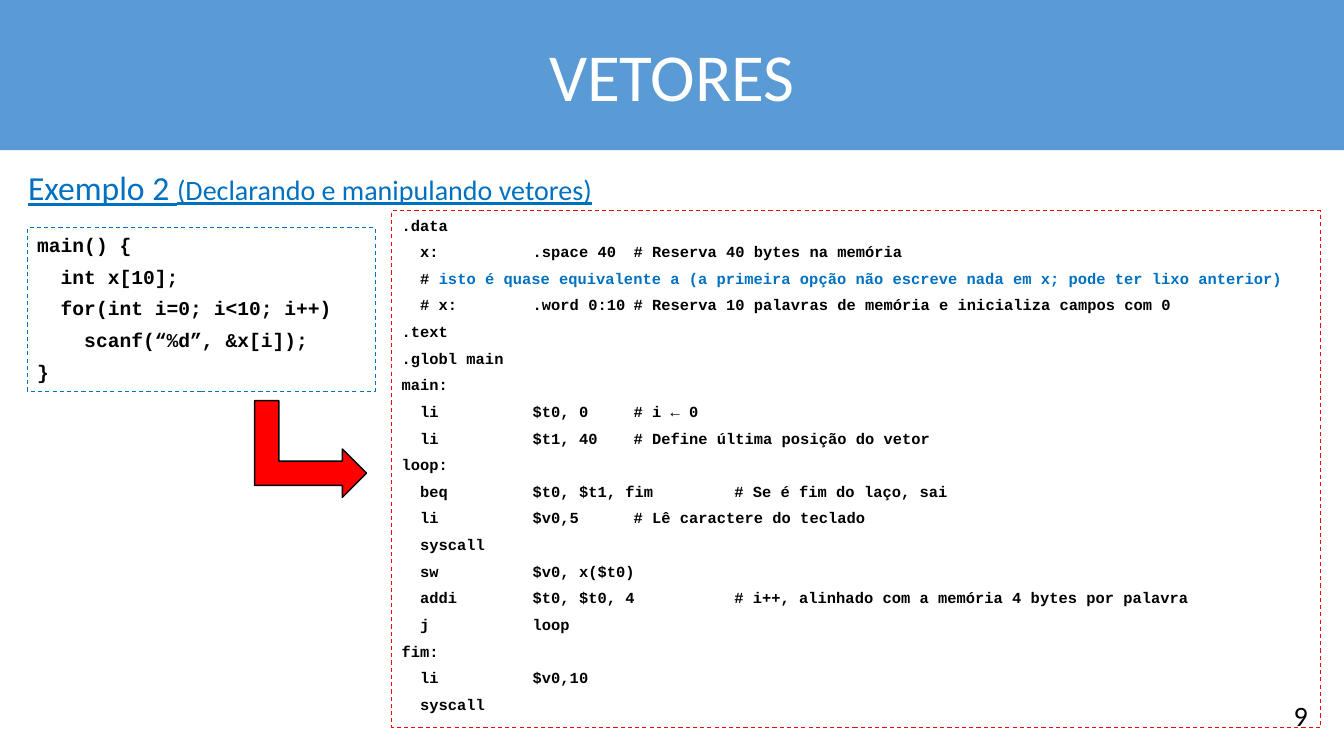
"""Builds the slide on declaring and handling vectors in assembly."""
from pptx import Presentation
from pptx.dml.color import RGBColor
from pptx.enum.dml import MSO_LINE
from pptx.enum.shapes import MSO_SHAPE
from pptx.enum.text import MSO_ANCHOR, MSO_AUTO_SIZE, PP_ALIGN
from pptx.util import Inches, Pt

RECTANGLE, BENT_ARROW = MSO_SHAPE.RECTANGLE, MSO_SHAPE.BENT_UP_ARROW
DASH, NO_FIT = MSO_LINE.DASH, MSO_AUTO_SIZE.NONE
TOP, MIDDLE = MSO_ANCHOR.TOP, MSO_ANCHOR.MIDDLE
LEFT, CENTER, RIGHT = PP_ALIGN.LEFT, PP_ALIGN.CENTER, PP_ALIGN.RIGHT
BLACK, WHITE, RED = "000000", "FFFFFF", "FF0000"
BLUE, BANNER = "0070C0", "5B9BD5"

C_CODE = """main() {
  int x[10];
  for(int i=0; i<10; i++)
    scanf(“%d”, &x[i]);
}"""

ASSEMBLY_CODE = """.data
  x:\t.space 40\t# Reserva 40 bytes na memória
  # |isto é quase equivalente a (a primeira opção não escreve nada em x; pode ter lixo anterior)
  # x:\t.word 0:10\t# Reserva 10 palavras de memória e inicializa campos com 0
.text
.globl main
main:
  li\t$t0, 0\t# i ← 0
  li\t$t1, 40\t# Define última posição do vetor
loop:
  beq\t$t0, $t1, fim\t# Se é fim do laço, sai
  li\t$v0,5\t# Lê caractere do teclado
  syscall
  sw\t$v0, x($t0)
  addi\t$t0, $t0, 4\t# i++, alinhado com a memória 4 bytes por palavra
  j\t\tloop
fim:
  li\t$v0,10
  syscall"""


def color(hex_code):
    return RGBColor.from_string(hex_code)


def add_run(para, text, size, hex_code, font="Calibri", bold=False, underline=False):
    span = para.add_run()
    span.text = text
    span.font.size = Pt(size)
    span.font.name = font
    span.font.bold = bold
    span.font.underline = underline
    span.font.color.rgb = color(hex_code)


deck = Presentation()
deck.slide_width, deck.slide_height = Inches(13.33), Inches(7.5)
page = deck.slides.add_slide(deck.slide_layouts[5])

title = page.shapes.title
title.left, title.top = Inches(0), Inches(0)
title.width, title.height = Inches(13.33), Inches(1.49)
title.fill.solid()
title.fill.fore_color.rgb = color(BANNER)
frame = title.text_frame
frame.auto_size = NO_FIT
frame.vertical_anchor = MIDDLE
frame.margin_left = frame.margin_right = Inches(0.8)
frame.paragraphs[0].alignment = CENTER
add_run(frame.paragraphs[0], "VETORES", 48, WHITE)

page_number = page.shapes.add_textbox(Inches(12.28), Inches(6.88), Inches(0.79), Inches(0.44))
page_number.text_frame.word_wrap = True
para = page_number.text_frame.paragraphs[0]
para.alignment = RIGHT
add_run(para, "9", 20, BLACK)

code_boxes = [
    (C_CODE, 0.27, 2.26, 3.45, 1.62, BLUE, 14),
    (ASSEMBLY_CODE, 3.885, 2.09, 9.21, 5.13, RED, 11),
]
for code, left, top, width, height, border, size in code_boxes:
    box = page.shapes.add_shape(RECTANGLE, Inches(left), Inches(top), Inches(width), Inches(height))
    box.shadow.inherit = False
    box.fill.background()
    box.line.color.rgb = color(border)
    box.line.width = Pt(0.75)
    box.line.dash_style = DASH
    frame = box.text_frame
    frame.word_wrap = True
    frame.auto_size = NO_FIT
    frame.vertical_anchor = TOP
    for index, code_line in enumerate(code.split("\n")):
        para = frame.add_paragraph() if index else frame.paragraphs[0]
        para.alignment = LEFT
        para.space_before = Pt(5.8)
        properties = para._p.get_or_add_pPr()
        properties.set("marL", str(Inches(0.3)))
        properties.set("indent", str(Inches(-0.3)))
        properties.set("defTabSz", str(Inches(1)))
        instruction, _, remark = code_line.partition("|")
        add_run(para, instruction, size, BLACK, "Courier New", bold=True)
        if remark:
            add_run(para, remark, size, BLUE, "Courier New", bold=True)

arrow = page.shapes.add_shape(BENT_ARROW, Inches(2.6), Inches(3.9), Inches(0.96), Inches(1.11))
arrow.rotation = 90
arrow.shadow.inherit = False
arrow.fill.solid()
arrow.fill.fore_color.rgb = color(RED)
arrow.line.color.rgb = color(BLACK)
arrow.line.width = Pt(1)

heading = page.shapes.add_textbox(Inches(0.18), Inches(1.61), Inches(6.03), Inches(0.5))
heading.text_frame.word_wrap = True
para = heading.text_frame.paragraphs[0]
add_run(para, "Exemplo 2 ", 24, BLUE, underline=True)
add_run(para, "(Declarando e manipulando vetores)", 20, BLUE, underline=True)

deck.save("out.pptx")
